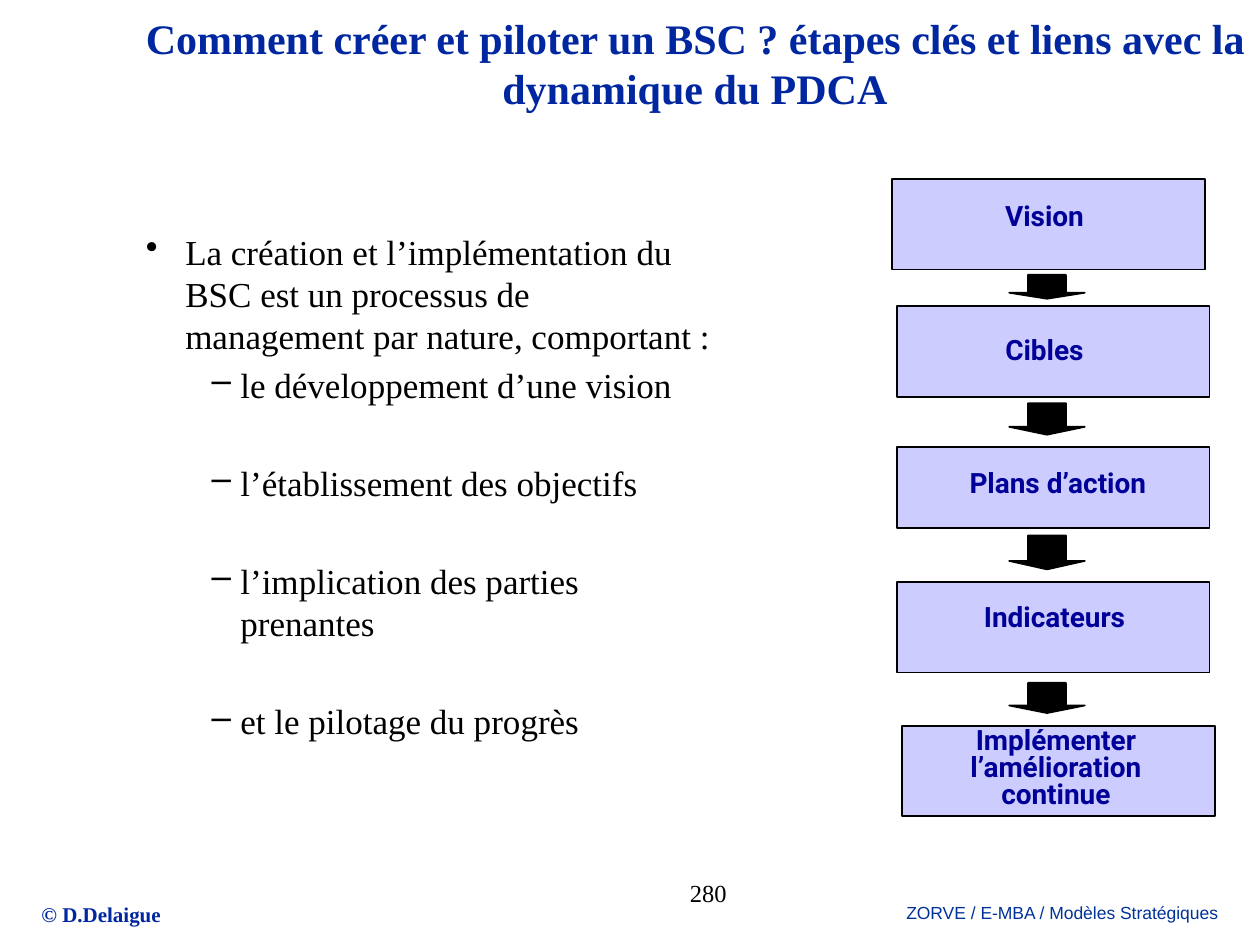
"""Builds the slide on the steps of a BSC and their link with the PDCA."""
import pptx
import pptx.dml.color
import pptx.enum.shapes
import pptx.enum.text
import pptx.oxml.ns
import pptx.util
from lxml import etree

Pt = pptx.util.Pt
RGBColor = pptx.dml.color.RGBColor
SHAPE = pptx.enum.shapes.MSO_SHAPE
ALIGN = pptx.enum.text.PP_ALIGN
ANCHOR = pptx.enum.text.MSO_ANCHOR

BLACK = RGBColor(0x00, 0x00, 0x00)
TITLE_BLUE = RGBColor(0x00, 0x27, 0x9F)
FOOTER_BLUE = RGBColor(0x00, 0x33, 0x99)
LABEL_BLUE = RGBColor(0x00, 0x00, 0x99)
LILAC = RGBColor(0xCC, 0xCC, 0xFF)
SERIF = "Times New Roman"

TITLE = "Comment créer et piloter un BSC ? étapes clés et liens avec la dynamique du PDCA"
INTRO = ("La création et l’implémentation du BSC est un processus de management "
         "par nature, comportant :")
POINTS = [
    "le développement d’une vision",
    "l’établissement des objectifs",
    "l’implication des parties prenantes",
    "et le pilotage du progrès",
]
# (label, box left, top, height), (label left, top, width, height)
STEPS = [
    ("Vision", (509.8, 102.2, 51.8), (533.5, 113.8, 126.7, 22.3)),
    ("Cibles", (512.6, 175, 51.8), (533.5, 190.1, 126.7, 22.3)),
    ("Plans d’action", (512.6, 255.6, 46.1), (524.2, 266.4, 160.6, 22.3)),
    ("Indicateurs", (512.6, 332.6, 51.8), (539.3, 342.7, 126.7, 22.3)),
    ("Implémenter l’amélioration continue", (515.5, 414.7, 51.8), (524.2, 413.3, 158.4, 53.3)),
]
STEP_WIDTH = 178.6
ARROWS = [(157, 13.7), (230.4, 18), (306, 19.4), (390.2, 17.3)]
ARROW_LEFT, ARROW_WIDTH = 576.7, 43.2


def add_box(page, left, top, width, height, wrap=True):
    box = page.shapes.add_textbox(Pt(left), Pt(top), Pt(width), Pt(height))
    box.text_frame.word_wrap = wrap
    return box.text_frame


def add_span(para, text, size, color, font=SERIF, bold=False, align=ALIGN.LEFT):
    para.alignment = align
    span = para.add_run()
    span.text = text
    span.font.size = Pt(size)
    span.font.name = font
    span.font.bold = bold
    span.font.color.rgb = color


def indent(para, margin, first, bullet=None):
    properties = para._p.get_or_add_pPr()
    properties.set("marL", str(Pt(margin)))
    properties.set("indent", str(Pt(first)))
    if bullet:
        mark = etree.SubElement(properties, pptx.oxml.ns.qn("a:buChar"))
        mark.set("char", bullet)


def add_solid(page, kind, left, top, width, height, fill):
    shape = page.shapes.add_shape(kind, Pt(left), Pt(top), Pt(width), Pt(height))
    shape.shadow.inherit = False
    shape.fill.solid()
    shape.fill.fore_color.rgb = fill
    shape.line.color.rgb = BLACK
    shape.line.width = Pt(1)
    return shape


def add_footers(page):
    author = add_box(page, 16.6, 511.9, 82.8, 21.6, wrap=False)
    add_span(author.paragraphs[0], "© D.Delaigue", 12, TITLE_BLUE, bold=True)
    course = add_box(page, 509, 511.9, 195.8, 19.4, wrap=False)
    add_span(course.paragraphs[0], "ZORVE / E-MBA / Modèles Stratégiques", 10,
             FOOTER_BLUE, "Arial", align=ALIGN.CENTER)
    number = add_box(page, 329.8, 498.2, 149.8, 36)
    add_span(number.paragraphs[0], "280", 14, BLACK, align=ALIGN.CENTER)


def add_body(page):
    frame = add_box(page, 76.3, 128.2, 340.6, 362.9)
    para = frame.paragraphs[0]
    add_span(para, INTRO, 20, BLACK)
    indent(para, 22.5, -22.5, "•")
    for index, point in enumerate(POINTS):
        para = frame.add_paragraph()
        para.level = 1
        para.space_before = Pt(32 if index else 4)
        add_span(para, point, 20, BLACK)
        indent(para, 54, -16.5, "–")


def add_flow(page):
    for label, (left, top, height), place in STEPS:
        add_solid(page, SHAPE.RECTANGLE, left, top, STEP_WIDTH, height, LILAC)
        para = add_box(page, *place).paragraphs[0]
        para.line_spacing = 0.8
        add_span(para, label, 16, LABEL_BLUE, "Roboto", True, ALIGN.CENTER)
    for top, height in ARROWS:
        arrow = add_solid(page, SHAPE.DOWN_ARROW, ARROW_LEFT, top, ARROW_WIDTH, height, BLACK)
        arrow.adjustments[0] = 0.5
        arrow.adjustments[1] = 0.25


def add_title(page):
    frame = add_box(page, 56.9, 0, 666, 71.3)
    frame.vertical_anchor = ANCHOR.MIDDLE
    para = frame.paragraphs[0]
    add_span(para, TITLE, 24, TITLE_BLUE, bold=True, align=ALIGN.CENTER)
    indent(para, 14.4, 0.7)


def main():
    deck = pptx.Presentation()
    deck.slide_width, deck.slide_height = Pt(720), Pt(540)
    page = deck.slides.add_slide(deck.slide_layouts[6])
    add_footers(page)
    add_body(page)
    add_flow(page)
    add_title(page)
    deck.save("out.pptx")


if __name__ == "__main__":
    main()
